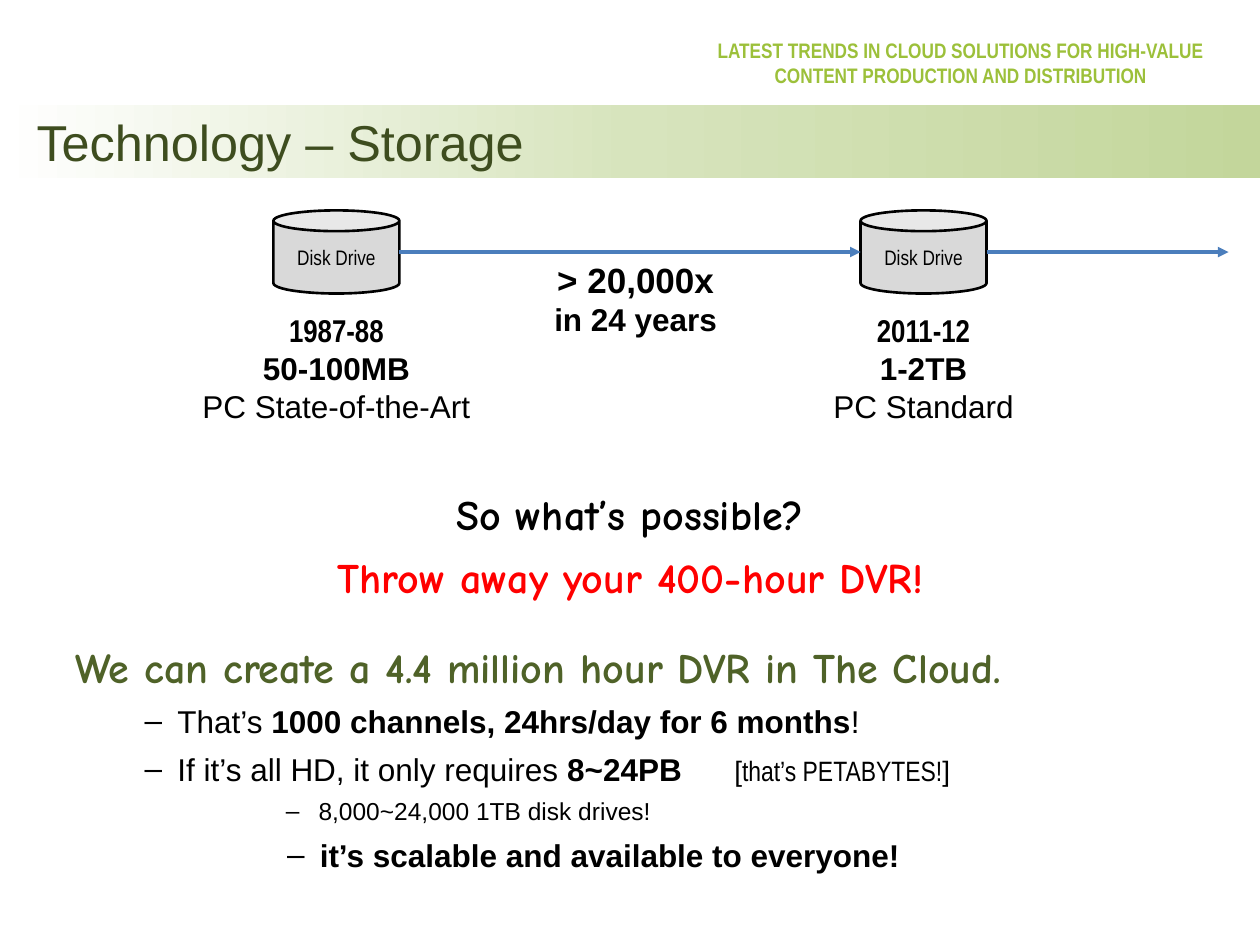
from copy import deepcopy
from dataclasses import dataclass

from lxml import etree
from pptx import Presentation
from pptx.dml.color import RGBColor
from pptx.enum.shapes import MSO_CONNECTOR, MSO_SHAPE
from pptx.enum.text import MSO_ANCHOR, PP_ALIGN
from pptx.oxml.ns import qn
from pptx.util import Inches, Pt

CENTER, LEFT = PP_ALIGN.CENTER, PP_ALIGN.LEFT
TOP, MIDDLE = MSO_ANCHOR.TOP, MSO_ANCHOR.MIDDLE
RECTANGLE, CAN = MSO_SHAPE.RECTANGLE, MSO_SHAPE.CAN
STRAIGHT = MSO_CONNECTOR.STRAIGHT


@dataclass(frozen=True)
class Theme:
    body: str = "Arial"
    narrow: str = "Arial Narrow"
    comic: str = "Comic Neue"
    black: str = "000000"
    red: str = "FF0000"
    header: str = "9CC03A"
    title: str = "3E4D1F"
    claim: str = "4F6228"
    disk: str = "D9D9D9"
    arrow: str = "4B7EBC"
    band: tuple = ("FFFFFF", "D7E4BD", "C3D69B")
    small: float = 12
    detail: float = 14
    aside: float = 16
    text: float = 18
    factor: float = 20
    big: float = 24
    heading: float = 28.8


THEME = Theme()


class SlideBuilder:
    def __init__(self, slide, theme):
        self.slide = slide
        self.theme = theme

    def add_text(self, paragraph, text, size=None, font=None, color=None, bold=False):
        run = paragraph.add_run()
        run.text = text
        run.font.size = Pt(size or self.theme.text)
        run.font.name = font or self.theme.body
        run.font.bold = bold
        run.font.color.rgb = RGBColor.from_string(color or self.theme.black)

    def add_lines(self, shape, lines, align=CENTER, anchor=TOP):
        """Fill a shape with lines, each a list of (text, style) runs."""
        frame = shape.text_frame
        frame.word_wrap = True
        frame.vertical_anchor = anchor
        for index, runs in enumerate(lines):
            paragraph = frame.add_paragraph() if index else frame.paragraphs[0]
            paragraph.alignment = align
            for text, style in runs:
                self.add_text(paragraph, text, **style)

    def text_box(self, left, top, width, height, lines=()):
        box = self.slide.shapes.add_textbox(
            Inches(left), Inches(top), Inches(width), Inches(height))
        self.add_lines(box, lines)
        return box

    def shape(self, kind, left, top, width, height):
        shape = self.slide.shapes.add_shape(
            kind, Inches(left), Inches(top), Inches(width), Inches(height))
        shape.shadow.inherit = False
        return shape

    def title_band(self, text, left, top, width, height):
        band = self.shape(RECTANGLE, left, top, width, height)
        band.line.fill.background()
        band.fill.gradient()
        band.fill.gradient_angle = 0
        first = band._element.spPr.find(qn("a:gradFill")).find(qn("a:gsLst"))[0]
        first.addnext(deepcopy(first))
        for stop, position, color in zip(band.fill.gradient_stops, (0, 0.5, 1), self.theme.band):
            stop.position = position
            stop.color.rgb = RGBColor.from_string(color)
        band.text_frame.margin_left = Inches(0.29)
        style = dict(size=self.theme.heading, color=self.theme.title)
        self.add_lines(band, [[(text, style)]], LEFT, MIDDLE)

    def disk(self, left, top, width, height):
        disk = self.shape(CAN, left, top, width, height)
        disk.fill.solid()
        disk.fill.fore_color.rgb = RGBColor.from_string(self.theme.disk)
        disk.line.color.rgb = RGBColor.from_string(self.theme.black)
        disk.line.width = Pt(1.5)
        style = dict(size=self.theme.small, font=self.theme.narrow)
        self.add_lines(disk, [[("Disk Drive", style)]], anchor=MIDDLE)

    def arrow(self, start, end, y):
        arrow = self.slide.shapes.add_connector(
            STRAIGHT, Inches(start), Inches(y), Inches(end), Inches(y))
        arrow.line.color.rgb = RGBColor.from_string(self.theme.arrow)
        arrow.line.width = Pt(2)
        line = arrow._element.spPr.find(qn("a:ln"))
        etree.SubElement(line, qn("a:tailEnd"), type="triangle")
        etree.SubElement(arrow._element.spPr, qn("a:effectLst"))

    def body_line(self, paragraph, runs, align=LEFT, indent=0.38, hanging=0.38,
                  bullet=None, tabs=(), before=1.5):
        properties = paragraph._p.get_or_add_pPr()
        properties.set("marL", str(Inches(indent)))
        properties.set("indent", str(-Inches(hanging)))
        if bullet:
            etree.SubElement(properties, qn("a:buFont"), typeface=self.theme.body)
            etree.SubElement(properties, qn("a:buChar"), char=bullet)
        if tabs:
            stops = etree.SubElement(properties, qn("a:tabLst"))
            for position in tabs:
                etree.SubElement(stops, qn("a:tab"), pos=str(Inches(position)), algn="l")
        paragraph.alignment = align
        paragraph.line_spacing = 1.2
        if before:
            paragraph.space_before = Pt(before)
        for text, style in runs:
            self.add_text(paragraph, text, **style)


def main():
    presentation = Presentation()
    presentation.slide_width = Inches(10)
    presentation.slide_height = Inches(7.5)
    slide = presentation.slides.add_slide(presentation.slide_layouts[6])
    builder = SlideBuilder(slide, THEME)
    bold = dict(bold=True)

    # Header and title
    header = dict(size=THEME.small, font=THEME.narrow, color=THEME.header, bold=True)
    builder.text_box(5.5, 0.25, 4.25, 0.5, [[(
        "LATEST TRENDS IN CLOUD SOLUTIONS FOR HIGH-VALUE "
        "CONTENT PRODUCTION AND DISTRIBUTION", header)]])
    builder.title_band("Technology – Storage", 0, 0.83, 10, 0.58)

    # Disk drives with their captions
    disk_width, caption_width = 1, 2.33
    drives = [
        (2.17, "1987-88", "50-100MB", "PC State-of-the-Art"),
        (6.83, "2011-12", "1-2TB", "PC Standard"),
    ]
    for left, years, capacity, grade in drives:
        builder.disk(left, 1.67, disk_width, 0.66)
        builder.text_box(
            left - (caption_width - disk_width) / 2, 2.42, caption_width, 1.01,
            [[(years, dict(font=THEME.narrow, bold=True))], [(capacity, bold)], [(grade, {})]])

    # Timeline arrows and growth factor
    for start, end in ((3.17, 6.83), (7.83, 9.75)):
        builder.arrow(start, end, 2)
    builder.text_box(4.17, 2, 1.75, 0.74, [
        [("> 20,000x", dict(size=THEME.factor, bold=True))], [("in 24 years", bold)]])

    # Message and bullets
    comic = dict(size=THEME.big, font=THEME.comic, bold=True)
    aside = dict(size=THEME.aside)
    dash = dict(bullet="–", indent=0.81, hanging=0.26)
    body = [
        ([("So what’s possible?", comic)], dict(align=CENTER, before=0)),
        ([("Throw away your 400-hour DVR!", dict(comic, color=THEME.red))], dict(align=CENTER)),
        ([("We can create a 4.4 million hour DVR in The Cloud.", dict(comic, color=THEME.claim))],
         dict(before=16.5)),
        ([("That’s ", {}), ("1000 channels, 24hrs/day for 6 months", bold), ("!", {})], dash),
        # Stops for tabs counted from the indent and from the box edge
        ([("If it’s all HD, it only requires ", {}), ("8~24PB\t", bold), ("[", aside),
          ("that’s PETABYTES!", dict(aside, font=THEME.narrow)), ("]", aside)],
         dict(dash, tabs=(4.42, 5.23))),
        ([("8,000~24,000 1TB disk drives!", dict(size=THEME.detail))], dict(dash, indent=1.93)),
        ([("it’s scalable and available to everyone!", bold)], dict(dash, indent=1.94)),
    ]
    frame = builder.text_box(0.5, 3.75, 9, 3.25).text_frame
    for index, (runs, layout) in enumerate(body):
        paragraph = frame.add_paragraph() if index else frame.paragraphs[0]
        builder.body_line(paragraph, runs, **layout)

    presentation.save("out.pptx")


if __name__ == "__main__":
    main()
